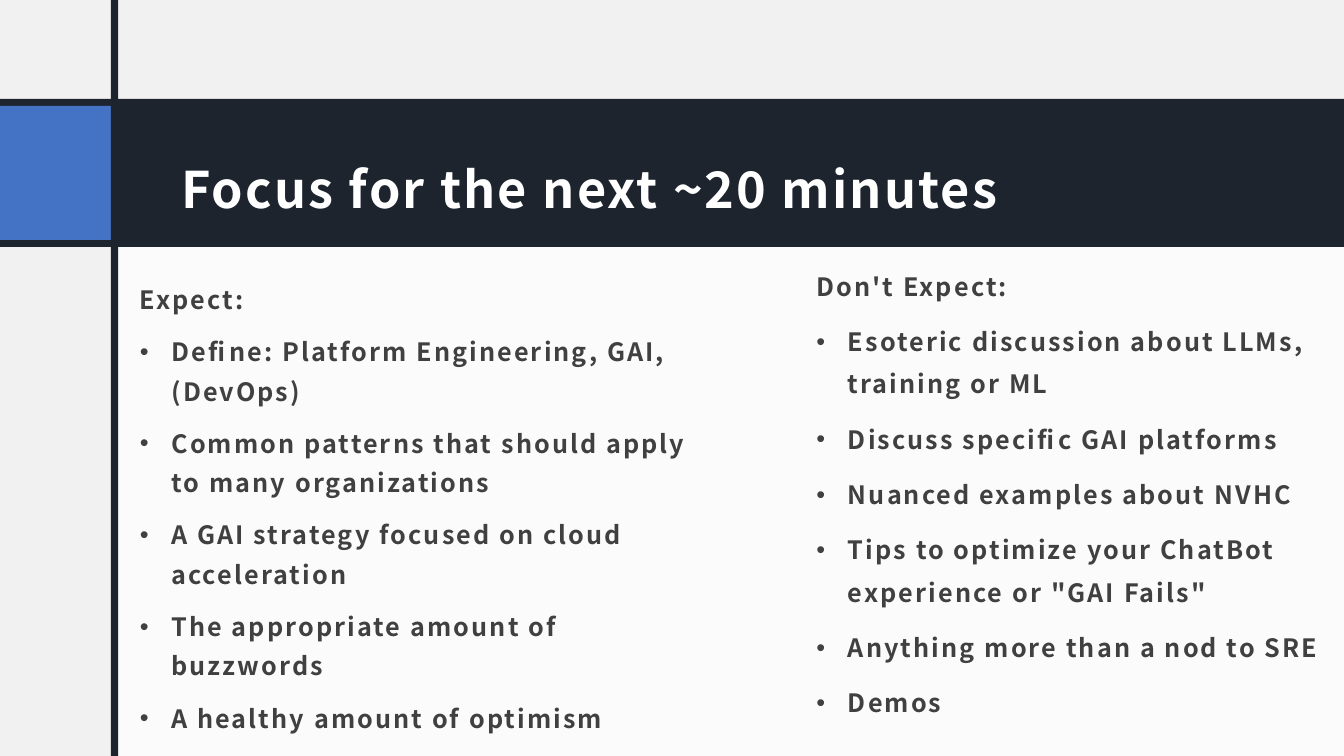
import pptx
import pptx.dml.color
import pptx.enum.shapes
import pptx.enum.text
import pptx.oxml
import pptx.oxml.ns
import pptx.util

Pt = pptx.util.Pt
FONT = "Noto Sans CJK JP"
NAVY = "1D242E"


def paint(fill, color):
    fill.solid()
    fill.fore_color.rgb = pptx.dml.color.RGBColor.from_string(color)


def add_run(paragraph, text, size, color):
    run = paragraph.add_run()
    run.text = text
    run.font.name = FONT
    run.font.size = Pt(size)
    run.font.bold = True
    paint(run.font.fill, color)
    run.font._element.set("spc", "150")


presentation = pptx.Presentation()
presentation.slide_width = Pt(960)
presentation.slide_height = Pt(540)
slide = presentation.slides.add_slide(presentation.slide_layouts[6])
paint(slide.background.fill, "F2F1F1")

# Panel, title band, accent block and vertical rule
rectangles = [
    (82, 168, 878, 372, "FFFFFF", 75),
    (0, 70.6, 960, 105.8, NAVY, 100),
    (0, 75.6, 79.2, 95.8, "4472C4", 100),
    (79.2, 0, 5.2, 540, NAVY, 100),
]
for left, top, width, height, color, opacity in rectangles:
    shape = slide.shapes.add_shape(
        pptx.enum.shapes.MSO_SHAPE.RECTANGLE, Pt(left), Pt(top), Pt(width), Pt(height))
    shape.shadow.inherit = False
    shape.line.fill.background()
    paint(shape.fill, color)
    if opacity < 100:
        color_element = shape._element.spPr.find(".//" + pptx.oxml.ns.qn("a:srgbClr"))
        alpha = pptx.oxml.parse_xml(
            f'<a:alpha {pptx.oxml.ns.nsdecls("a")} val="{opacity * 1000}"/>')
        color_element.append(alpha)

# Title and the two columns: box, line spacing, size, colour, heading, bullets
texts = [
    ((121, 82, 788.4, 81.4), 1.5, 36, "FFFFFF", "Focus for the next ~20 minutes", []),
    ((91.4, 188, 414.7, 343.4), 1.3, 18, "404040", "Expect:", [
        "Define: Platform Engineering, GAI, (DevOps)",
        "Common patterns that should apply to many organizations",
        "A GAI strategy focused on cloud acceleration",
        "The appropriate amount of buzzwords",
        "A healthy amount of optimism",
    ]),
    ((574.6, 176.4, 385.4, 382.3), 1.4, 18, "404040", "Don't Expect:", [
        "Esoteric discussion about LLMs, training or ML",
        "Discuss specific GAI platforms",
        "Nuanced examples about NVHC",
        "Tips to optimize your ChatBot experience or \"GAI Fails\"",
        "Anything more than a nod to SRE",
        "Demos",
    ]),
]
for box, line_spacing, size, color, heading, bullets in texts:
    frame = slide.shapes.add_textbox(*map(Pt, box)).text_frame
    frame.word_wrap = True
    frame.margin_left = frame.margin_top = frame.margin_right = Pt(8.6)
    frame.margin_bottom = Pt(7.2)
    if not bullets:
        frame.vertical_anchor = pptx.enum.text.MSO_ANCHOR.MIDDLE
    for index, text in enumerate([heading] + bullets):
        paragraph = frame.add_paragraph() if index else frame.paragraphs[0]
        paragraph.line_spacing = line_spacing
        if bullets:
            paragraph.space_before = Pt(9.3)
        if index:
            properties = paragraph._element.get_or_add_pPr()
            properties.set("marL", str(Pt(22.5)))
            properties.set("indent", str(-Pt(22.5)))
            for bullet in ('<a:buFont %s typeface="Arial"/>', '<a:buChar %s char="•"/>'):
                properties.append(pptx.oxml.parse_xml(bullet % pptx.oxml.ns.nsdecls("a")))
        add_run(paragraph, text, size, color)

presentation.save("out.pptx")
